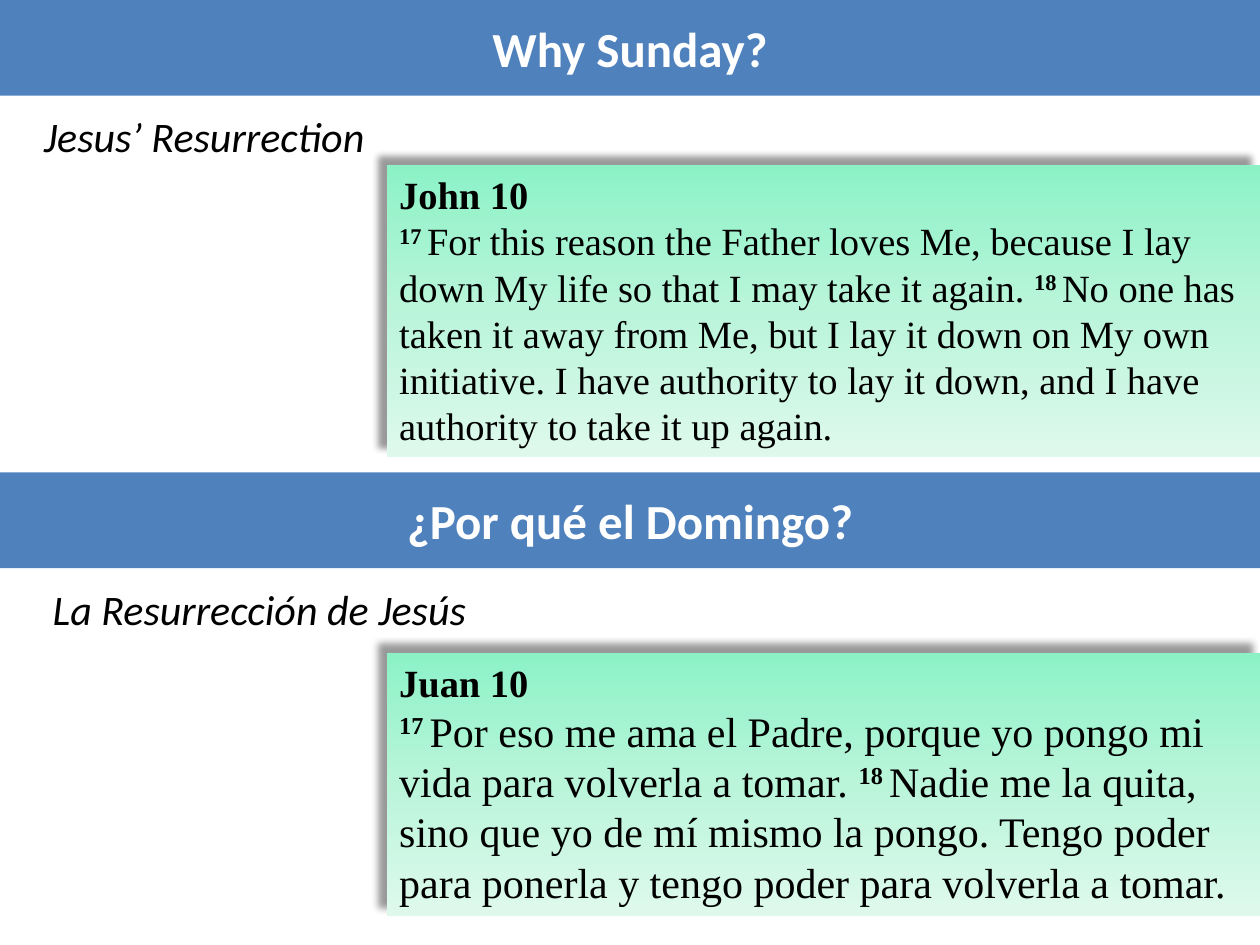
from copy import deepcopy
from pptx import Presentation
from pptx.dml.color import RGBColor
from pptx.enum.shapes import MSO_SHAPE
from pptx.enum.text import MSO_ANCHOR, MSO_AUTO_SIZE, PP_ALIGN
from pptx.oxml import parse_xml
from pptx.oxml.ns import nsdecls, qn
from pptx.util import Inches, Pt

WIDE, HIGH = 10, 7.5
HALF = HIGH / 2
LEFT = 3.07
MINT = ("8CF2C6", "BAF5DA", "DEF9EC")
SHADE = (
    f'<a:outerShdw {nsdecls("a")} blurRad="50800" dist="88900" dir="13500000" '
    'algn="br" rotWithShape="0"><a:srgbClr val="000000">'
    '<a:alpha val="40000"/></a:srgbClr></a:outerShdw>'
)


def color(code):
    """Turn a hex string into a colour."""
    return RGBColor.from_string(code)


def style(item, size, face, ink="000000", bold=False, slant=False):
    """Set the font of a paragraph or a run."""
    font = item.font
    font.size, font.name = Pt(size), face
    font.bold, font.italic = bold, slant
    font.color.rgb = color(ink)


def block(slide, left, top, width, height):
    """Add a rectangle without line or shadow."""
    shape = slide.shapes.add_shape(
        MSO_SHAPE.RECTANGLE, *map(Inches, (left, top, width, height)))
    shape.line.fill.background()
    shape.shadow.inherit = False
    return shape


def banner(slide, top, text):
    """Add a full-width title bar."""
    bar = block(slide, 0, top, WIDE, 0.76)
    bar.fill.solid()
    bar.fill.fore_color.rgb = color("4F81BD")
    bar.text_frame.vertical_anchor = MSO_ANCHOR.MIDDLE
    para = bar.text_frame.paragraphs[0]
    para.text, para.alignment = text, PP_ALIGN.CENTER
    style(para, 28, "Calibri", "FFFFFF", bold=True)


def topic(slide, left, top, width, text, wrap):
    """Add an italic subtitle."""
    box = slide.shapes.add_textbox(*map(Inches, (left, top, width, 0.5)))
    frame = box.text_frame
    frame.word_wrap = wrap
    frame.auto_size = MSO_AUTO_SIZE.SHAPE_TO_FIT_TEXT
    para = frame.paragraphs[0]
    para.text = text
    style(para, 24, "Calibri", slant=True)


def blend(shape):
    """Fill a shape with the mint gradient from top to bottom."""
    fill = shape.fill
    fill.gradient()
    fill.gradient_angle = 270
    stops = shape._element.spPr.find(qn("a:gradFill")).find(qn("a:gsLst"))
    stops.insert(1, deepcopy(stops[0]))
    for place, (stop, code) in enumerate(zip(fill.gradient_stops, MINT)):
        stop.position = place / 2
        stop.color.rgb = color(code)


def passage(slide, top, height, title, verses, size):
    """Add a shaded panel with a heading and numbered verses."""
    panel = block(slide, LEFT, top, WIDE - LEFT, height)
    blend(panel)
    panel._element.spPr.find(qn("a:effectLst")).append(parse_xml(SHADE))
    frame = panel.text_frame
    frame.word_wrap = True
    frame.auto_size = MSO_AUTO_SIZE.SHAPE_TO_FIT_TEXT
    frame.vertical_anchor = MSO_ANCHOR.TOP
    head, body = frame.paragraphs[0], frame.add_paragraph()
    head.text = title
    head.alignment = body.alignment = PP_ALIGN.LEFT
    style(head, 22, "Times New Roman", bold=True)
    for mark, text in verses:
        for part, raised in ((mark, True), (text, False)):
            run = body.add_run()
            run.text = part
            style(run, size, "Times New Roman", bold=raised)
            if raised:
                run.font._element.set("baseline", "30000")


def main():
    """Build the slide and save it."""
    deck = Presentation()
    deck.slide_width, deck.slide_height = Inches(WIDE), Inches(HIGH)
    slide = deck.slides.add_slide(deck.slide_layouts[6])
    banner(slide, HALF, "¿Por qué el Domingo?")
    banner(slide, 0, "Why Sunday?")
    topic(slide, 0.25, 0.83, 9.17, "Jesus’ Resurrection", True)
    passage(slide, 1.31, 2.32, "John 10", (
        ("17 ", "For this reason the Father loves Me, because I lay down "
                "My life so that I may take it again. "),
        ("18 ", "No one has taken it away from Me, but I lay it down on My "
                "own initiative. I have authority to lay it down, and I have "
                "authority to take it up again."),
    ), 22)
    topic(slide, 0.32, HALF + 0.83, 3.56, "La Resurrección de Jesús", False)
    passage(slide, 5.18, 2.09, "Juan 10", (
        ("17 ", "Por eso me ama el Padre, porque yo pongo mi vida para "
                "volverla a tomar. "),
        ("18 ", "Nadie me la quita, sino que yo de mí mismo la pongo. Tengo "
                "poder para ponerla y tengo poder para volverla a tomar."),
    ), 24)
    deck.save("out.pptx")


if __name__ == "__main__":
    main()
